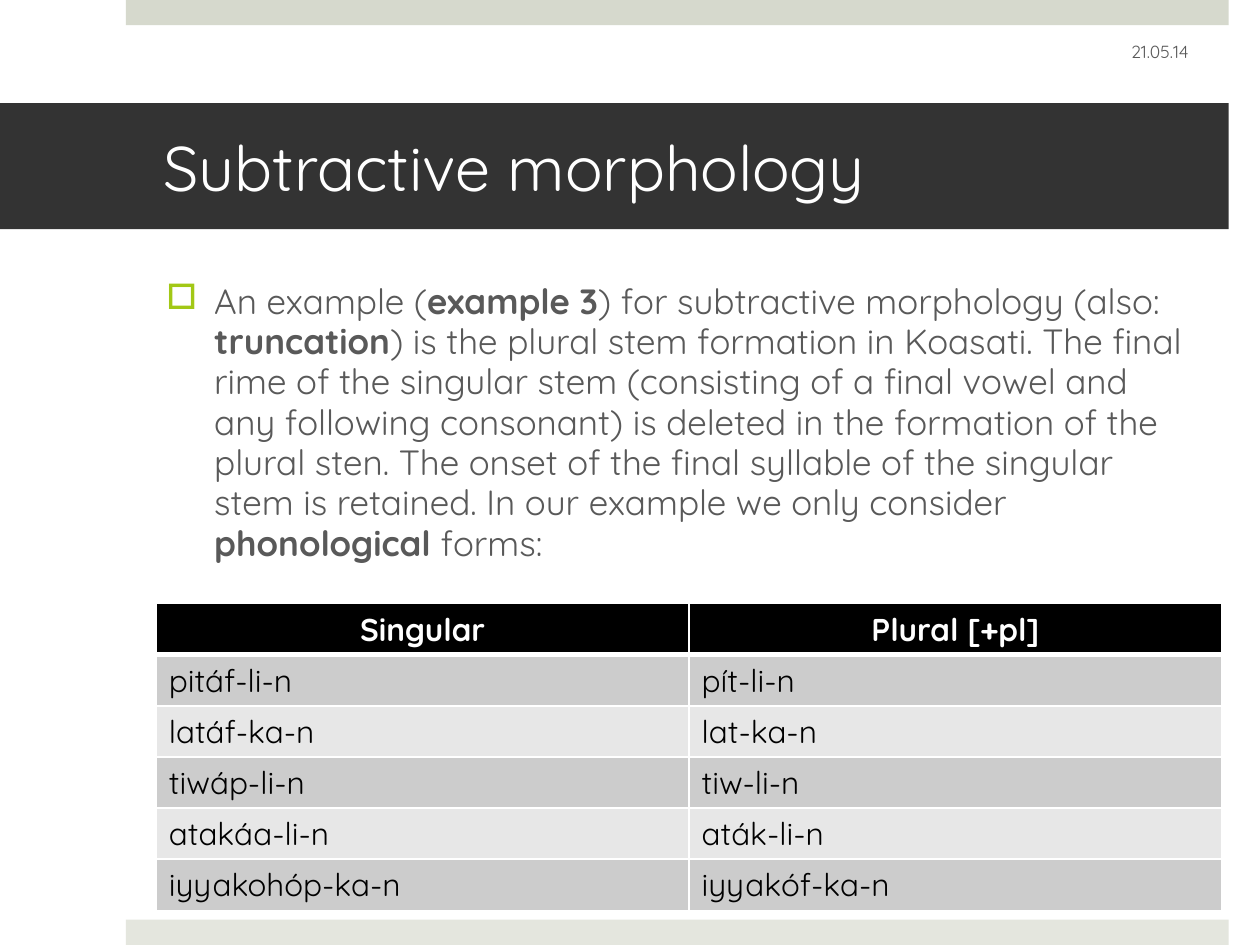
from lxml.etree import SubElement
from pptx import Presentation
from pptx.dml.color import RGBColor
from pptx.enum.shapes import MSO_SHAPE as Preset
from pptx.enum.text import MSO_ANCHOR as Anchor, PP_ALIGN as Align
from pptx.oxml import parse_xml
from pptx.oxml.ns import nsdecls, qn
from pptx.util import Cm, Pt

FONT = "Quicksand"
WHITE, BLACK, GREY = "FFFFFF", "000000", "595959"
BULLET, BULLET_COLOR = "□", "A2C816"

TITLE = "Subtractive morphology"
DATE = "21.05.14"
EXPLANATION = [
    ("An example (", False),
    ("example 3", True),
    (") for subtractive morphology (also: ", False),
    ("truncation", True),
    (") is the plural stem formation in Koasati. The final rime of the singular stem "
     "(consisting of a final vowel and any following consonant) is deleted in the "
     "formation of the plural sten. The onset of the final syllable of the singular "
     "stem is retained. In our example we only consider ", False),
    ("phonological", True),
    (" forms:", False),
]
STEMS = [
    ("Singular", "Plural [+pl]"),
    ("pitáf-li-n", "pít-li-n"),
    ("latáf-ka-n", "lat-ka-n"),
    ("tiwáp-li-n", "tiw-li-n"),
    ("atakáa-li-n", "aták-li-n"),
    ("iyyakohóp-ka-n", "iyyakóf-ka-n"),
]
BANDS = ("E7E7E7", "CCCCCC")
EDGE_BARS = [(0, "D6D9CD"), (18.54, "E4E6DE")]
COLUMN_WIDTH, ROW_HEIGHT = 10.74, 1.03


def rgb(value):
    return RGBColor.from_string(value)


def box(left, top, width, height):
    return Cm(left), Cm(top), Cm(width), Cm(height)


def add_run(paragraph, text, size, color, bold=False):
    run = paragraph.add_run()
    run.text = text
    run.font.name = FONT
    run.font.size = Pt(size)
    run.font.bold = bold
    run.font.color.rgb = rgb(color)


def add_bar(slide, area, color):
    bar = slide.shapes.add_shape(Preset.RECTANGLE, *area)
    bar.shadow.inherit = False
    bar.fill.solid()
    bar.fill.fore_color.rgb = rgb(color)
    bar.line.fill.background()
    return bar


def add_text(slide, area, anchor):
    frame = slide.shapes.add_textbox(*area).text_frame
    frame.word_wrap = True
    frame.vertical_anchor = anchor
    return frame.paragraphs[0]


def add_bullet(paragraph, indent):
    props = paragraph._p.get_or_add_pPr()
    props.set("marL", str(Cm(indent)))
    props.set("indent", str(-Cm(indent)))
    color = SubElement(props, qn("a:buClr"))
    SubElement(color, qn("a:srgbClr"), val=BULLET_COLOR)
    SubElement(props, qn("a:buChar"), char=BULLET)


def set_borders(cell, widths):
    props = cell._tc.get_or_add_tcPr()
    for position, (side, width) in enumerate(widths.items()):
        props.insert(position, parse_xml(
            f'<a:ln{side} {nsdecls("a")} w="{Pt(width)}"><a:solidFill>'
            f'<a:srgbClr val="{WHITE}"/></a:solidFill></a:ln{side}>'))


def add_stem_table(slide, left, top):
    area = box(left, top, COLUMN_WIDTH * len(STEMS[0]), ROW_HEIGHT * len(STEMS))
    table = slide.shapes.add_table(len(STEMS), len(STEMS[0]), *area).table
    for row, forms in enumerate(STEMS):
        header = row == 0
        for column, form in enumerate(forms):
            cell = table.cell(row, column)
            cell.fill.solid()
            cell.fill.fore_color.rgb = rgb(BLACK if header else BANDS[row % 2])
            set_borders(cell, {"L": 1, "R": 1, "T": 3 if row == 1 else 1,
                               "B": 3 if header else 1})
            paragraph = cell.text_frame.paragraphs[0]
            paragraph.alignment = Align.CENTER if header else Align.LEFT
            add_run(paragraph, form, 18, WHITE if header else BLACK, header)


def main():
    deck = Presentation()
    deck.slide_width, deck.slide_height = Cm(25.4), Cm(19.05)
    slide = deck.slides.add_slide(deck.slide_layouts[6])

    for top, color in EDGE_BARS:
        add_bar(slide, box(2.54, top, 22.23, 0.51), color)

    heading = add_bar(slide, box(0, 2.08, 24.77, 2.54), "333333").text_frame
    heading.word_wrap = True
    heading.vertical_anchor = Anchor.MIDDLE
    heading.margin_left, heading.margin_right = Cm(3.3), Cm(0.76)
    heading.paragraphs[0].alignment = Align.LEFT
    add_run(heading.paragraphs[0], TITLE, 36, WHITE)

    explanation = add_text(slide, box(3.1, 5.56, 21.13, 11.86), Anchor.TOP)
    explanation.line_spacing = 0.96
    add_bullet(explanation, 0.97)
    for text, bold in EXPLANATION:
        add_run(explanation, text, 20, GREY, bold)

    date = add_text(slide, box(18.29, 0.53, 5.92, 1.02), Anchor.MIDDLE)
    date.alignment = Align.RIGHT
    add_run(date, DATE, 10, GREY)

    add_stem_table(slide, 3.15, 12.17)
    deck.save("out.pptx")


if __name__ == "__main__":
    main()
